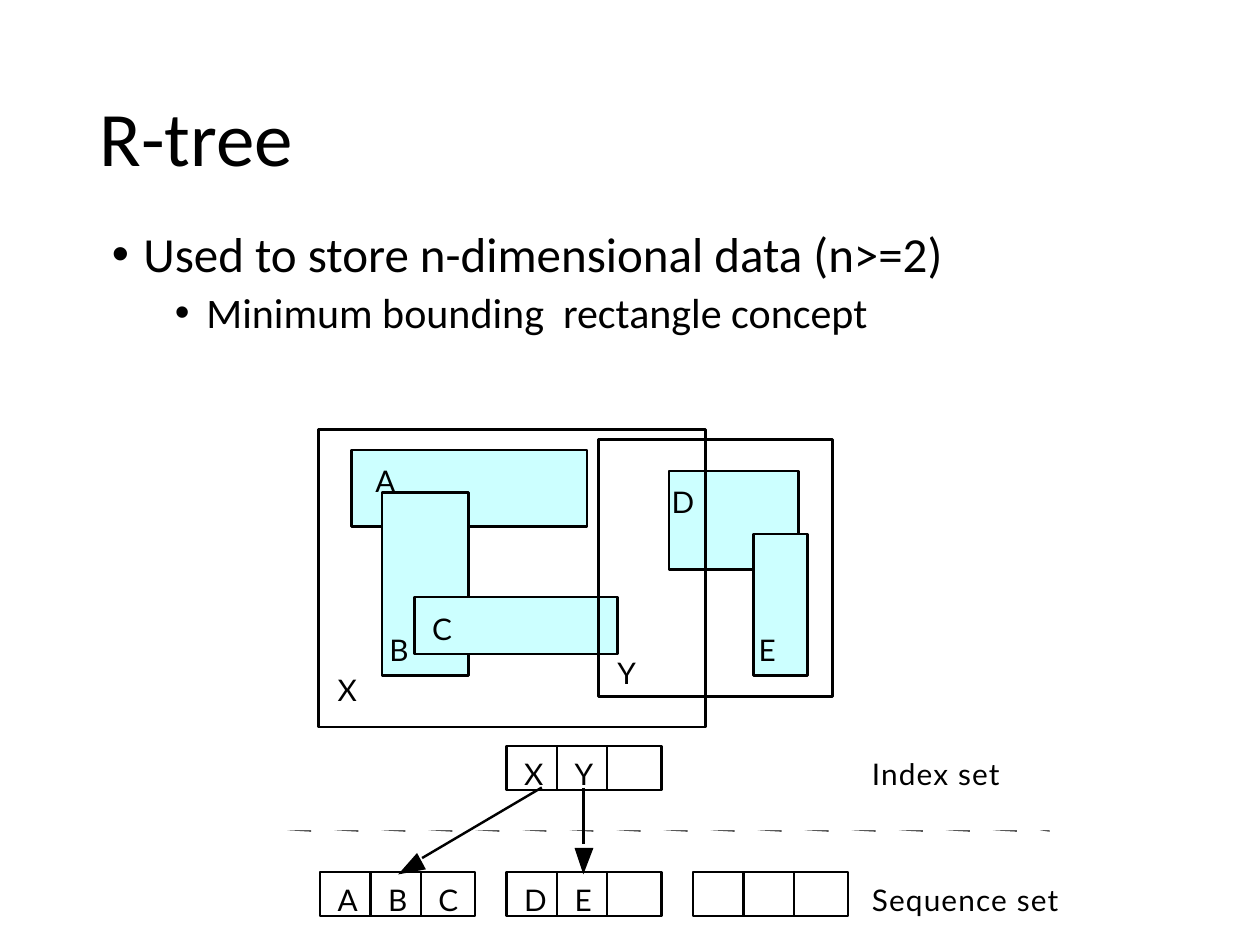
from lxml import etree
from pptx import Presentation
from pptx.dml.color import RGBColor
from pptx.enum.shapes import MSO_CONNECTOR as CONN, MSO_SHAPE as SHAPE
from pptx.enum.text import MSO_ANCHOR as ANCHOR
from pptx.oxml.ns import qn
from pptx.util import Inches, Pt

TITLE = "R-tree"
BULLETS = [
    ("Used to store n-dimensional data (n>=2)", 28, 0.25, 10),
    ("Minimum bounding  rectangle concept", 24, 0.75, 5),
]
DATA_RECTS = [
    ("A", (2.79, 3.57, 1.87, 0.61), (2.98, 3.67)),
    ("B", (3.03, 3.91, 0.69, 1.45), (3.09, 5.01)),
    ("C", (3.29, 4.74, 1.61, 0.45), (3.43, 4.85)),
    ("D", (5.31, 3.74, 1.03, 0.78), (5.33, 3.84)),
    ("E", (5.98, 4.24, 0.43, 1.12), (6.02, 5.01)),
]
BOUNDING_RECTS = [
    ("X", (2.53, 3.41, 3.07, 2.36), (2.68, 5.33)),
    ("Y", (4.75, 3.49, 1.86, 2.04), (4.9, 5.2)),
]
INDEX_TOP, SEQUENCE_TOP = 5.92, 6.92
NODES = [
    (1, INDEX_TOP, ["X", "Y", ""]),
    (0, SEQUENCE_TOP, ["A", "B", "C"]),
    (1, SEQUENCE_TOP, ["D", "E", ""]),
    (2, SEQUENCE_TOP, ["", "", ""]),
]
ROW_NAMES = [("Index set", INDEX_TOP), ("Sequence set", SEQUENCE_TOP)]
POINTERS = [
    ((4.3, 6.25), (3.35, 6.81), [(3.38, 6.9), (3.31, 6.77), (3.16, 6.94)]),
    ((4.63, 6.25), (4.63, 6.7), [(4.71, 6.73), (4.56, 6.73), (4.63, 6.94)]),
]
NODE_LEFT, NODE_PITCH = 2.54, 1.48
CELL_PITCH, CELL_W, CELL_H = 0.4, 0.43, 0.35
KEY_DX, KEY_DY = 0.14, 0.08
ROW_NAME_LEFT, ROW_NAME_W = 6.92, 2
DASH_LEFT, DASH_RIGHT, DASH_TOP = 2.28, 8.33, 6.59
DASH_COUNT, DASH_PITCH, DASH_W, DASH_H = 17, 5.6 / 15, 0.19, 0.01

THEME = {
    "ink": RGBColor(0, 0, 0),
    "paper": RGBColor(255, 255, 255),
    "data": RGBColor(0xCC, 0xFF, 0xFF),
    "font": "Calibri",
    "label_font": "Lato",
    "title": 44,
    "label": 17,
    "row_spacing": 65,
    "line": 1.38,
    "bound_line": 1.5,
}

prs = Presentation()
prs.slide_width, prs.slide_height = Inches(10), Inches(7.5)
s = prs.slides.add_slide(prs.slide_layouts[6])


def add_run(p, text, size, font):
    r = p.add_run()
    r.text = text
    r.font.size, r.font.name = Pt(size), font
    r.font.color.rgb = THEME["ink"]
    return r


def add_box(left, top, width, height):
    tf = s.shapes.add_textbox(*map(Inches, (left, top, width, height))).text_frame
    tf.word_wrap = True
    return tf


def add_label(text, left, top, width=0.25):
    tf = add_box(left, top, width, 0.28)
    tf.margin_left = tf.margin_right = tf.margin_top = tf.margin_bottom = 0
    return add_run(tf.paragraphs[0], text, THEME["label"], THEME["label_font"])


def add_rect(box, fill=None, line=THEME["line"]):
    sp = s.shapes.add_shape(SHAPE.RECTANGLE, *map(Inches, box))
    sp.shadow.inherit = False
    if fill is None:
        sp.fill.background()
    else:
        sp.fill.solid()
        sp.fill.fore_color.rgb = fill
    sp.line.color.rgb, sp.line.width = THEME["ink"], Pt(line)


def add_polygon(points):
    start, *rest = [(Inches(x), Inches(y)) for x, y in points]
    builder = s.shapes.build_freeform(*start)
    builder.add_line_segments(rest, close=True)
    sp = builder.convert_to_shape()
    sp.shadow.inherit = False
    sp.fill.solid()
    sp.fill.fore_color.rgb = THEME["ink"]
    sp.line.fill.background()


def add_line(start, end):
    c = s.shapes.add_connector(CONN.STRAIGHT, *map(Inches, start + end))
    c.line.color.rgb, c.line.width = THEME["ink"], Pt(THEME["line"])
    etree.SubElement(c._element.spPr, qn("a:effectLst"))


def add_bullet(p, indent):
    pPr = p._p.get_or_add_pPr()
    pPr.set("marL", str(Inches(indent)))
    pPr.set("indent", str(Inches(-0.25)))
    etree.SubElement(pPr, qn("a:buFont")).set("typeface", "Arial")
    etree.SubElement(pPr, qn("a:buChar")).set("char", "•")


tf = add_box(0.69, 0.4, 8.62, 1.45)
tf.vertical_anchor = ANCHOR.MIDDLE
p = tf.paragraphs[0]
p.line_spacing = 0.9
add_run(p, TITLE, THEME["title"], THEME["font"])

tf = add_box(0.79, 1.78, 8.5, 4.33)
for i, (text, size, indent, before) in enumerate(BULLETS):
    p = tf.add_paragraph() if i else tf.paragraphs[0]
    p.line_spacing, p.space_before = 0.9, Pt(before)
    add_bullet(p, indent)
    add_run(p, text, size, THEME["font"])

for name, box, at in DATA_RECTS:
    add_rect(box, THEME["data"])
for name, box, at in BOUNDING_RECTS:
    add_rect(box, line=THEME["bound_line"])
for name, box, at in DATA_RECTS + BOUNDING_RECTS:
    add_label(name, *at)

for column, top, keys in NODES:
    for i, key in enumerate(keys):
        left = NODE_LEFT + column * NODE_PITCH + i * CELL_PITCH
        add_rect((left, top, CELL_W, CELL_H), THEME["paper"])
        if key:
            add_label(key, left + KEY_DX, top + KEY_DY)

for text, top in ROW_NAMES:
    r = add_label(text, ROW_NAME_LEFT, top + KEY_DY, ROW_NAME_W)
    r.font._element.set("spc", str(THEME["row_spacing"]))

for start, end, head in POINTERS:
    add_line(start, end)
    add_polygon(head)

for i in range(DASH_COUNT):
    left = DASH_LEFT + i * DASH_PITCH
    right = min(left + DASH_W, DASH_RIGHT)
    add_polygon([(left, DASH_TOP), (right, DASH_TOP), (right, DASH_TOP + DASH_H)])

prs.save("out.pptx")
